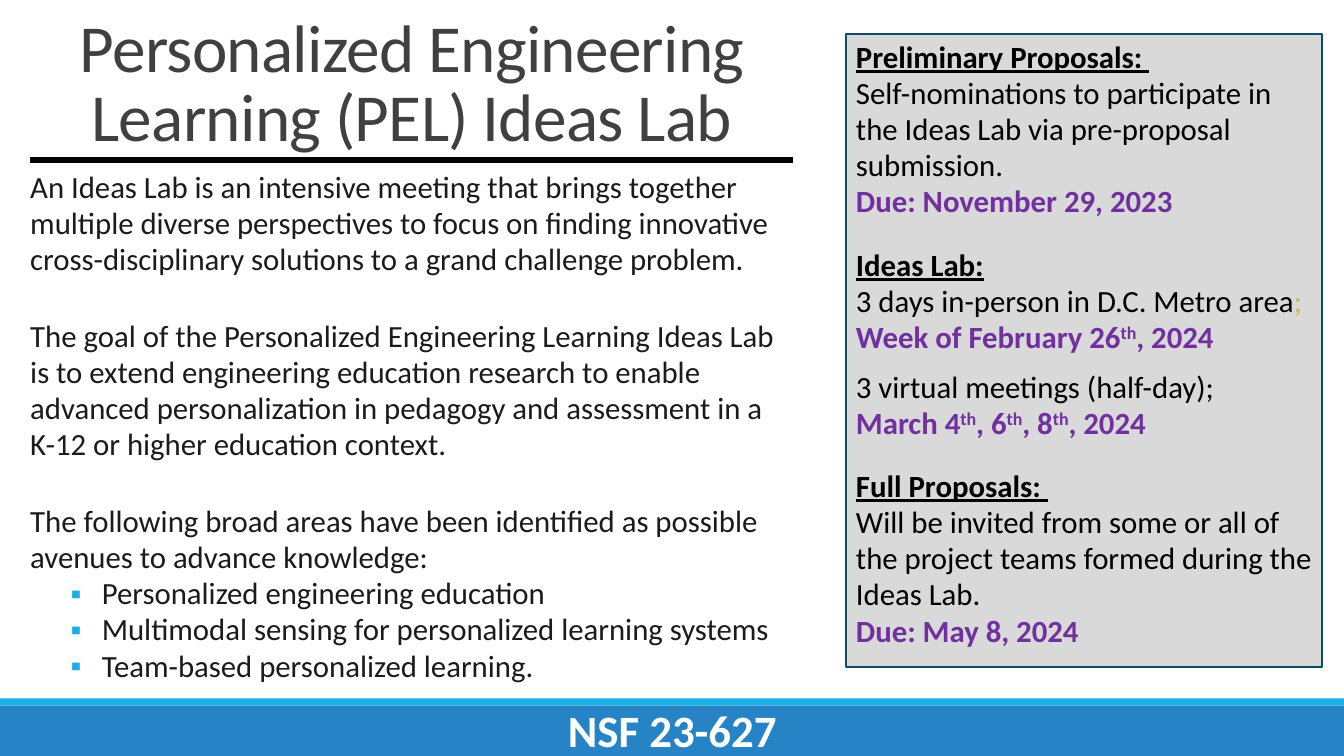
from lxml.etree import SubElement
from pptx import Presentation
from pptx.dml.color import RGBColor
from pptx.enum.shapes import MSO_CONNECTOR, MSO_SHAPE
from pptx.enum.text import MSO_ANCHOR, MSO_AUTO_SIZE, PP_ALIGN
from pptx.oxml.ns import qn
from pptx.util import Inches, Pt

# Content
TITLE = "Personalized Engineering Learning (PEL) Ideas Lab"
FOOTER = "NSF 23-627"
INTRO = [
    "An Ideas Lab is an intensive meeting that brings together multiple diverse "
    "perspectives to focus on finding innovative cross-disciplinary solutions to a "
    "grand challenge problem.",
    "The goal of the Personalized Engineering Learning Ideas Lab is to extend "
    "engineering education research to enable advanced personalization in pedagogy "
    "and assessment in a K-12 or higher education context.",
    "The following broad areas have been identified as possible avenues to advance "
    "knowledge:",
]
AREAS = [
    "Personalized engineering education",
    "Multimodal sensing for personalized learning systems",
    "Team-based personalized learning.",
]
# Each paragraph: (small gaps above, [(text, style), ...])
SCHEDULE = [
    (0, [("Preliminary Proposals: ", "heading")]),
    (0, [("Self-nominations to participate in the Ideas Lab via pre-proposal "
          "submission.", "plain")]),
    (0, [("Due: November 29, 2023", "date")]),
    (2, [("Ideas Lab:", "heading")]),
    (0, [("3 days in-person in D.C. Metro area", "plain"), ("; ", "mark"),
         ("Week of February 26", "date"), ("th", "ordinal"), (", 2024", "date")]),
    (1, [("3 virtual meetings (half-day);", "plain")]),
    (0, [("March 4", "date"), ("th", "ordinal"), (", 6", "date"), ("th", "ordinal"),
         (", 8", "date"), ("th", "ordinal"), (", 2024", "date")]),
    (2, [("Full Proposals: ", "heading")]),
    (0, [("Will be invited from some or all of the project teams formed during the "
          "Ideas Lab.", "plain")]),
    (0, [("Due: May 8, 2024", "date")]),
]

# Look
COLORS = {
    "bar": "2683C6", "accent": "1CADE4", "panel": "D9D9D9", "panel_line": "0C4C64",
    "title": "404040", "body": "1B1B1B", "black": "000000", "white": "FFFFFF",
    "date": "7030A0", "mark": "D3B34E",
}
STYLES = {  # colour, bold, underline, baseline
    "heading": ("black", True, True, 0),
    "plain": ("black", False, False, 0),
    "mark": ("mark", False, False, 0),
    "date": ("date", True, False, 0),
    "ordinal": ("date", True, False, 30000),
}
FONT, TEXT_SIZE, LINE, GAP = "Calibri", 22, 0.98, 9.6
W, H = 13.33, 7.5
LEFT, COL_W, RULE_Y = 0.3, 7.57, 1.59
PANEL_X, PANEL_Y, PANEL_W, PANEL_H = 8.39, 0.34, 4.72, 6.28


def rgb(name):
    return RGBColor.from_string(COLORS[name])


def place(sp, x, y, w, h):
    sp.left, sp.top, sp.width, sp.height = map(Inches, (x, y, w, h))


def add_rect(x, y, w, h, fill, line=None):
    sp = s.shapes.add_shape(MSO_SHAPE.RECTANGLE, *map(Inches, (x, y, w, h)))
    sp.shadow.inherit = False
    sp.fill.solid()
    sp.fill.fore_color.rgb = rgb(fill)
    if line:
        sp.line.color.rgb = rgb(line)
        sp.line.width = Pt(1.25)
    else:
        sp.line.fill.background()
    return sp


def add_run(p, text, color, size=TEXT_SIZE, bold=False):
    r = p.add_run()
    r.text = text
    r.font.name, r.font.size, r.font.bold = FONT, Pt(size), bold
    r.font.color.rgb = rgb(color)
    return r


def setup_frame(tf):
    tf.word_wrap = True
    tf.auto_size = MSO_AUTO_SIZE.NONE
    tf.vertical_anchor = MSO_ANCHOR.TOP
    tf.margin_left = tf.margin_right = 0
    tf.margin_top = tf.margin_bottom = Inches(0.05)


def next_paragraph(tf, index, gaps):
    p = tf.paragraphs[0] if index == 0 else tf.add_paragraph()
    p.line_spacing = LINE
    p.space_before, p.space_after = Pt(gaps * GAP), Pt(0)
    return p


def set_bullet(p, bulleted):
    pPr = p._p.get_or_add_pPr()
    pPr.set("marL", str(Inches(0.71 if bulleted else 0)))
    pPr.set("indent", str(Inches(-0.31 if bulleted else 0)))
    if bulleted:
        clr = SubElement(pPr, qn("a:buClr"))
        SubElement(clr, qn("a:srgbClr"), val=COLORS["accent"])
        SubElement(pPr, qn("a:buFont"), typeface="Arial")
        SubElement(pPr, qn("a:buChar"), char="▪")
    else:
        SubElement(pPr, qn("a:buNone"))


prs = Presentation()
prs.slide_width, prs.slide_height = Inches(W), Inches(H)
s = prs.slides.add_slide(prs.slide_layouts[1])

# Title
title = s.shapes.title
place(title, LEFT, 0, COL_W, RULE_Y)
tf = title.text_frame
tf.auto_size = MSO_AUTO_SIZE.NONE
tf.vertical_anchor = MSO_ANCHOR.BOTTOM
p = tf.paragraphs[0]
p.alignment, p.line_spacing = PP_ALIGN.CENTER, 0.85
r = add_run(p, TITLE, "title", 48)
r.font._element.set("spc", "-50")

# Introduction and bulleted areas
body = s.placeholders[1]
place(body, LEFT, 1.63, COL_W, 5.29)
tf = body.text_frame
setup_frame(tf)
for i, text in enumerate(INTRO + AREAS):
    bulleted = i >= len(INTRO)
    p = next_paragraph(tf, i, 0 if bulleted or i == 0 else 3)
    set_bullet(p, bulleted)
    add_run(p, text, "body")

# Schedule panel
add_rect(PANEL_X, PANEL_Y, PANEL_W, PANEL_H, "panel", "panel_line")
schedule = s.shapes.add_textbox(*map(Inches, (PANEL_X + 0.1, PANEL_Y, 4.54, PANEL_H)))
tf = schedule.text_frame
setup_frame(tf)
for i, (gaps, runs) in enumerate(SCHEDULE):
    p = next_paragraph(tf, i, gaps)
    for text, style in runs:
        color, bold, underline, baseline = STYLES[style]
        r = add_run(p, text, color, bold=bold)
        r.font.underline = underline
        if baseline:
            r.font._element.set("baseline", str(baseline))

# Footer band
add_rect(0, 7, W, 0.5, "bar")
add_rect(0, 6.93, W, 0.07, "accent")
footer = s.shapes.add_textbox(*map(Inches, (5.39, 6.92, 2.56, 0.64)))
footer.text_frame.word_wrap = True
p = footer.text_frame.paragraphs[0]
p.alignment = PP_ALIGN.CENTER
add_run(p, FOOTER, "white", 32, True)

# Rule under the title
rule = s.shapes.add_connector(
    MSO_CONNECTOR.STRAIGHT, *map(Inches, (LEFT, RULE_Y, LEFT + COL_W, RULE_Y)))
rule.line.color.rgb = rgb("black")
rule.line.width = Pt(4)
SubElement(rule._element.spPr, qn("a:effectLst"))

prs.save("out.pptx")
